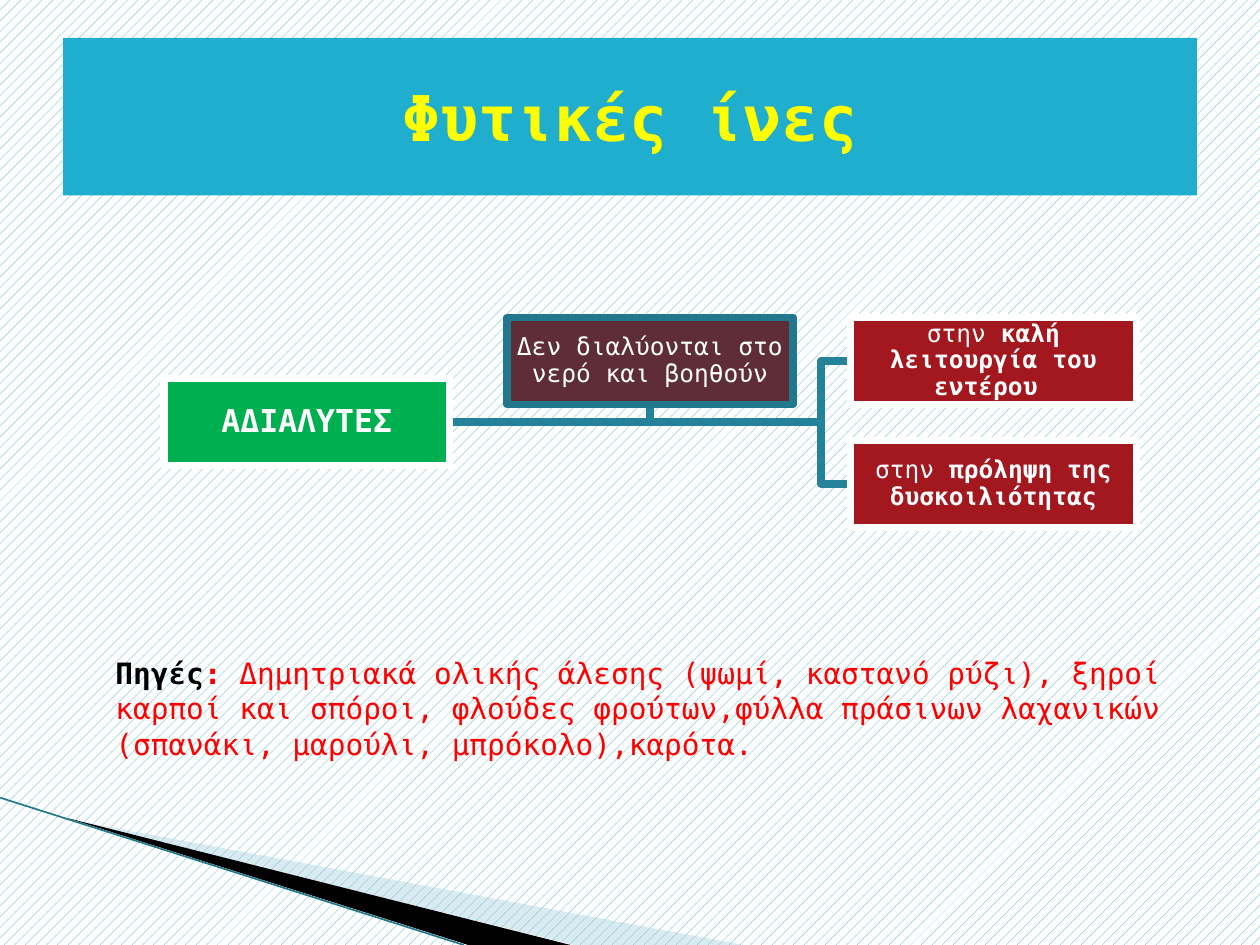
from lxml.etree import SubElement
from pptx import Presentation
from pptx.dml.color import RGBColor
from pptx.enum.dml import MSO_PATTERN
from pptx.enum.shapes import MSO_CONNECTOR, MSO_SHAPE
from pptx.enum.text import MSO_ANCHOR, PP_ALIGN
from pptx.oxml.ns import qn
from pptx.util import Pt

FONT = "DejaVu Sans Mono"
WHITE = RGBColor(0xFF, 0xFF, 0xFF)
BLACK = RGBColor(0, 0, 0)
RED = RGBColor(0xFF, 0, 0)
YELLOW = RGBColor(0xFF, 0xFF, 0)
GREEN = RGBColor(0, 0xB0, 0x50)
CRIMSON = RGBColor(0xA3, 0x17, 0x1E)
PLUM = RGBColor(0x5E, 0x2D, 0x37)
BANNER = RGBColor(0x1F, 0xAE, 0xCD)
HATCH = RGBColor(0x2D, 0xA2, 0xBF)
TEAL = RGBColor(0x24, 0x82, 0x99)
DARK_TEAL = RGBColor(0x21, 0x78, 0x8D)
PALE_BLUE = RGBColor(0xA0, 0xCB, 0xDC)

TITLE = "Φυτικές ίνες"
SOURCES = [
    ("Πηγές", True, BLACK),
    (":", True, RED),
    (" Δημητριακά ολικής άλεσης (ψωμί, καστανό ρύζι), ξηροί καρποί και σπόροι, "
     "φλούδες φρούτων,φύλλα πράσινων λαχανικών (σπανάκι, μαρούλι, "
     "μπρόκολο),καρότα.", False, RED),
]
BOX_WIDTH, BOX_HEIGHT, LINE_WIDTH = 163.4, 49.8, 4.33
COLUMNS = [93.6, 289.8, 486]
UPPER, MIDDLE, LOWER = 181.4, 216.2, 251.6
BOXES = [
    (COLUMNS[0], MIDDLE, GREEN, WHITE, 18, [("ΑΔΙΑΛΥΤΕΣ", True, WHITE)]),
    (COLUMNS[1], UPPER, PLUM, DARK_TEAL, 14,
     [("Δεν διαλύονται στο νερό και βοηθούν", False, WHITE)]),
    (COLUMNS[2], UPPER, CRIMSON, WHITE, 14,
     [("στην ", False, WHITE), ("καλή λειτουργία του εντέρου ", True, WHITE)]),
    (COLUMNS[2], LOWER, CRIMSON, WHITE, 14,
     [("στην ", False, WHITE), ("πρόληψη της δυσκοιλιότητας", True, WHITE)]),
]
WEDGES = [
    ([(39.6, 468.3), (425, 540), (328, 540)], PALE_BLUE, 40),
    ([(38.5, 467.5), (326, 540), (267.5, 540)], BLACK, 100),
]


def write_text(frame, runs, size, align=PP_ALIGN.CENTER, anchor=MSO_ANCHOR.MIDDLE,
               margin=1, spacing=0.9):
    frame.word_wrap = True
    frame.vertical_anchor = anchor
    frame.margin_left = frame.margin_right = Pt(margin)
    frame.margin_top = frame.margin_bottom = Pt(margin)
    paragraph = frame.paragraphs[0]
    paragraph.alignment = align
    paragraph.line_spacing = spacing
    for text, bold, color in runs:
        run = paragraph.add_run()
        run.text = text
        run.font.name = FONT
        run.font.size = Pt(size)
        run.font.bold = bold
        run.font.color.rgb = color


def add_path(shapes, points, close=False):
    corners = [(Pt(x), Pt(y)) for x, y in points]
    builder = shapes.build_freeform(*corners[0])
    builder.add_line_segments(corners[1:], close=close)
    shape = builder.convert_to_shape()
    shape.shadow.inherit = False
    return shape


def add_wedge(shapes, points, color, opacity):
    shape = add_path(shapes, points, close=True)
    shape.fill.solid()
    shape.fill.fore_color.rgb = color
    shape.line.fill.background()
    if opacity < 100:
        color_element = shape.fill._xPr.find(".//" + qn("a:srgbClr"))
        SubElement(color_element, qn("a:alpha")).set("val", str(opacity * 1000))


def add_branch(shapes, points):
    shape = add_path(shapes, points)
    shape.fill.background()
    shape.line.color.rgb = TEAL
    shape.line.width = Pt(LINE_WIDTH)


def add_box(shapes, left, top, fill, border, size, runs):
    box = shapes.add_shape(MSO_SHAPE.RECTANGLE, Pt(left), Pt(top),
                           Pt(BOX_WIDTH), Pt(BOX_HEIGHT))
    box.shadow.inherit = False
    box.fill.solid()
    box.fill.fore_color.rgb = fill
    box.line.color.rgb = border
    box.line.width = Pt(LINE_WIDTH)
    write_text(box.text_frame, runs, size)


def main():
    presentation = Presentation()
    presentation.slide_width, presentation.slide_height = Pt(720), Pt(540)
    slide = presentation.slides.add_slide(presentation.slide_layouts[5])
    shapes = slide.shapes

    background = slide.background.fill
    background.patterned()
    background.pattern = MSO_PATTERN.PERCENT_20
    background.fore_color.rgb = HATCH
    background.back_color.rgb = WHITE

    for points, color, opacity in WEDGES:
        add_wedge(shapes, points, color, opacity)
    edge = shapes.add_connector(MSO_CONNECTOR.STRAIGHT, Pt(0), Pt(455.8), Pt(265), Pt(540))
    edge.line.color.rgb = DARK_TEAL
    edge.line.width = Pt(0.95)
    SubElement(edge._element.spPr, qn("a:effectLst"))

    title = shapes.title
    title.left, title.top, title.width, title.height = Pt(36), Pt(21.6), Pt(648), Pt(90)
    title.fill.solid()
    title.fill.fore_color.rgb = BANNER
    write_text(title.text_frame, [(TITLE, True, YELLOW)], 36, margin=4, spacing=1.0)

    start = COLUMNS[0] + BOX_WIDTH
    axis = MIDDLE + BOX_HEIGHT / 2
    fork = COLUMNS[2] - 16.8
    note_center = COLUMNS[1] + BOX_WIDTH / 2
    add_branch(shapes, [(start, axis), (note_center, axis), (note_center, UPPER + BOX_HEIGHT)])
    for top in (LOWER, UPPER):
        center = top + BOX_HEIGHT / 2
        add_branch(shapes, [(start, axis), (fork, axis), (fork, center), (COLUMNS[2], center)])
    for box in BOXES:
        add_box(shapes, *box)

    sources = shapes.add_textbox(Pt(66), Pt(374), Pt(606), Pt(62))
    write_text(sources.text_frame, SOURCES, 16.8, align=PP_ALIGN.LEFT,
               anchor=MSO_ANCHOR.TOP, margin=0, spacing=Pt(20.3))
    presentation.save("out.pptx")


if __name__ == "__main__":
    main()
